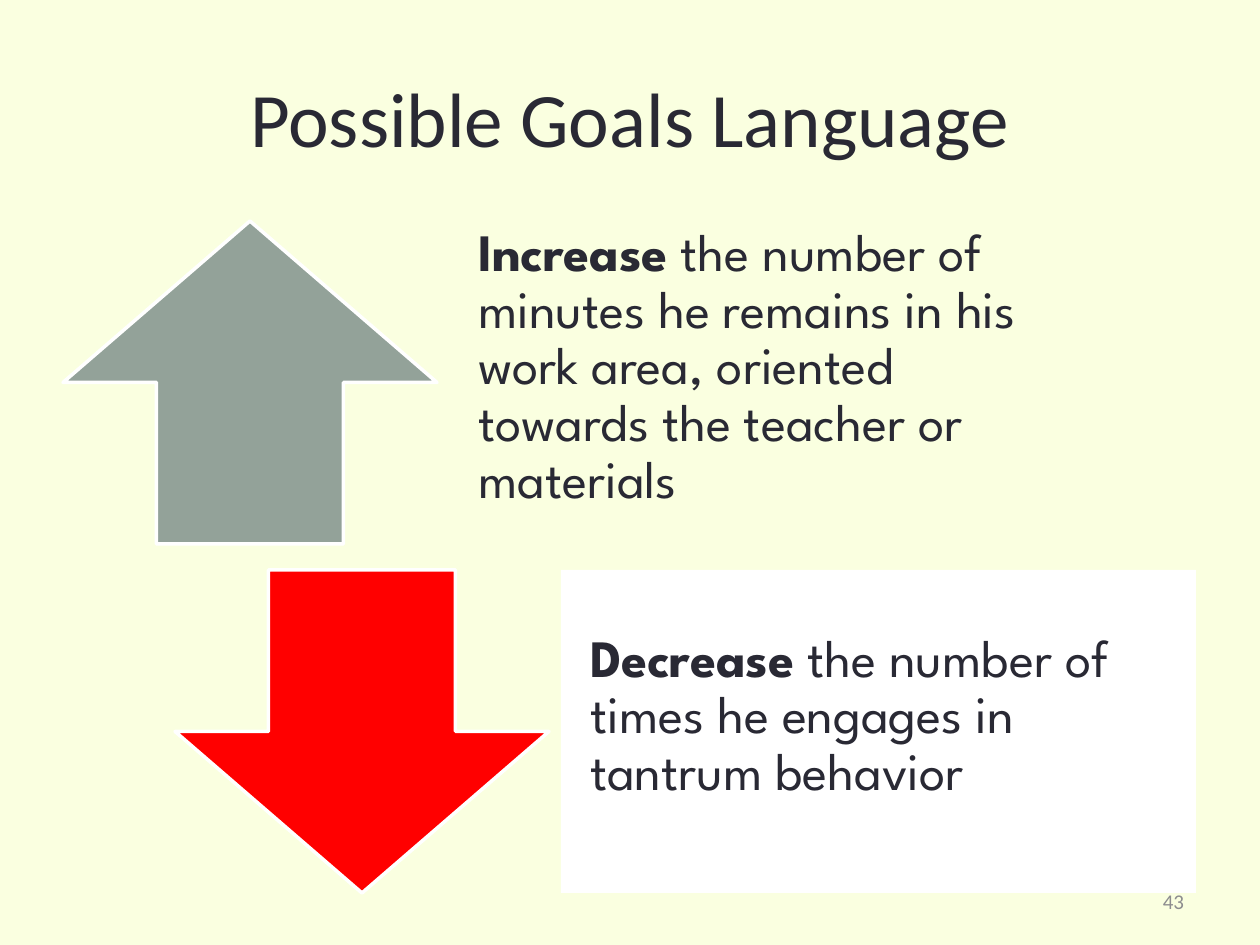
from dataclasses import dataclass
from typing import Optional

import pptx
import pptx.dml.color
import pptx.enum.shapes
import pptx.enum.text
import pptx.util

ALIGN = pptx.enum.text.PP_ALIGN
SHAPE = pptx.enum.shapes.MSO_SHAPE
PX_PER_INCH = 126


@dataclass(frozen=True)
class Theme:
    background: str = "FAFFE0"
    ink: str = "292934"
    muted: str = "8D8D8F"
    white: str = "FFFFFF"
    increase: str = "93A299"
    decrease: str = "FF0000"
    heading_font: str = "Calibri"
    body_font: str = "League Spartan"
    title_size: int = 44
    body_size: int = 30
    number_size: int = 12
    outline_width: int = 2


@dataclass(frozen=True)
class Area:
    left: int
    top: int
    width: int
    height: int


@dataclass(frozen=True)
class Span:
    text: str
    font: str
    size: int
    color: str
    bold: bool = False


@dataclass(frozen=True)
class Goal:
    arrow: int
    arrow_color: str
    verb: str
    rest: str
    panel_color: Optional[str] = None


THEME = Theme()
GOALS = (
    Goal(SHAPE.UP_ARROW, THEME.increase, "Increase",
         " the number of minutes he remains in his work area, "
         "oriented towards the teacher or materials"),
    Goal(SHAPE.DOWN_ARROW, THEME.decrease, "Decrease",
         " the number of times he engages in tantrum behavior", THEME.white),
)
FIRST_ARROW = Area(63, 221, 374, 323)
FIRST_TEXT = Area(449, 221, 635, 323)
STEP_RIGHT, STEP_DOWN = 112, 349
GOAL_MARGINS = (29, 0, 29, 29)
DEFAULT_MARGINS = (13, 6, 13, 6)


def px(length: int) -> int:
    return pptx.util.Emu(round(length * 914400 / PX_PER_INCH))


def rgb(color: str) -> pptx.dml.color.RGBColor:
    return pptx.dml.color.RGBColor.from_string(color)


def set_all(target, values: dict) -> None:
    for name, value in values.items():
        setattr(target, name, value)


def bounds(area: Area) -> tuple:
    return px(area.left), px(area.top), px(area.width), px(area.height)


def shifted(area: Area, steps: int) -> Area:
    return Area(area.left + steps * STEP_RIGHT, area.top + steps * STEP_DOWN,
                area.width, area.height)


def add_text(page, area: Area, spans: list[Span], align: int,
             margins: tuple = DEFAULT_MARGINS, line_spacing: float = 1.0,
             fill: Optional[str] = None) -> None:
    box = page.shapes.add_textbox(*bounds(area))
    if fill:
        box.fill.solid()
        box.fill.fore_color.rgb = rgb(fill)
    frame = box.text_frame
    left, top, right, bottom = map(px, margins)
    set_all(frame, {
        "word_wrap": True,
        "vertical_anchor": pptx.enum.text.MSO_ANCHOR.MIDDLE,
        "margin_left": left, "margin_top": top,
        "margin_right": right, "margin_bottom": bottom,
    })
    para = frame.paragraphs[0]
    set_all(para, {"alignment": align, "line_spacing": line_spacing})
    for span in spans:
        run = para.add_run()
        run.text = span.text
        set_all(run.font, {"name": span.font, "bold": span.bold,
                           "size": pptx.util.Pt(span.size)})
        run.font.color.rgb = rgb(span.color)


def add_arrow(page, area: Area, kind: int, color: str) -> None:
    arrow = page.shapes.add_shape(kind, *bounds(area))
    arrow.shadow.inherit = False
    arrow.fill.solid()
    arrow.fill.fore_color.rgb = rgb(color)
    arrow.line.color.rgb = rgb(THEME.white)
    arrow.line.width = pptx.util.Pt(THEME.outline_width)


def add_goal(page, goal: Goal, index: int) -> None:
    add_arrow(page, shifted(FIRST_ARROW, index), goal.arrow, goal.arrow_color)
    spans = [Span(text, THEME.body_font, THEME.body_size, THEME.ink, bold)
             for text, bold in ((goal.verb, True), (goal.rest, False))]
    add_text(page, shifted(FIRST_TEXT, index), spans, ALIGN.LEFT,
             GOAL_MARGINS, 0.9, goal.panel_color)


def main() -> None:
    deck = pptx.Presentation()
    set_all(deck, {"slide_width": px(1260), "slide_height": px(945)})
    page = deck.slides.add_slide(deck.slide_layouts[6])
    page.background.fill.solid()
    page.background.fill.fore_color.rgb = rgb(THEME.background)

    title = Span("Possible Goals Language", THEME.heading_font,
                 THEME.title_size, THEME.ink)
    add_text(page, Area(63, 38, 1134, 158), [title], ALIGN.CENTER)
    for index, goal in enumerate(GOALS):
        add_goal(page, goal, index)
    number = Span("43", THEME.heading_font, THEME.number_size, THEME.muted)
    add_text(page, Area(903, 876, 294, 50), [number], ALIGN.RIGHT)

    deck.save("out.pptx")


if __name__ == "__main__":
    main()
